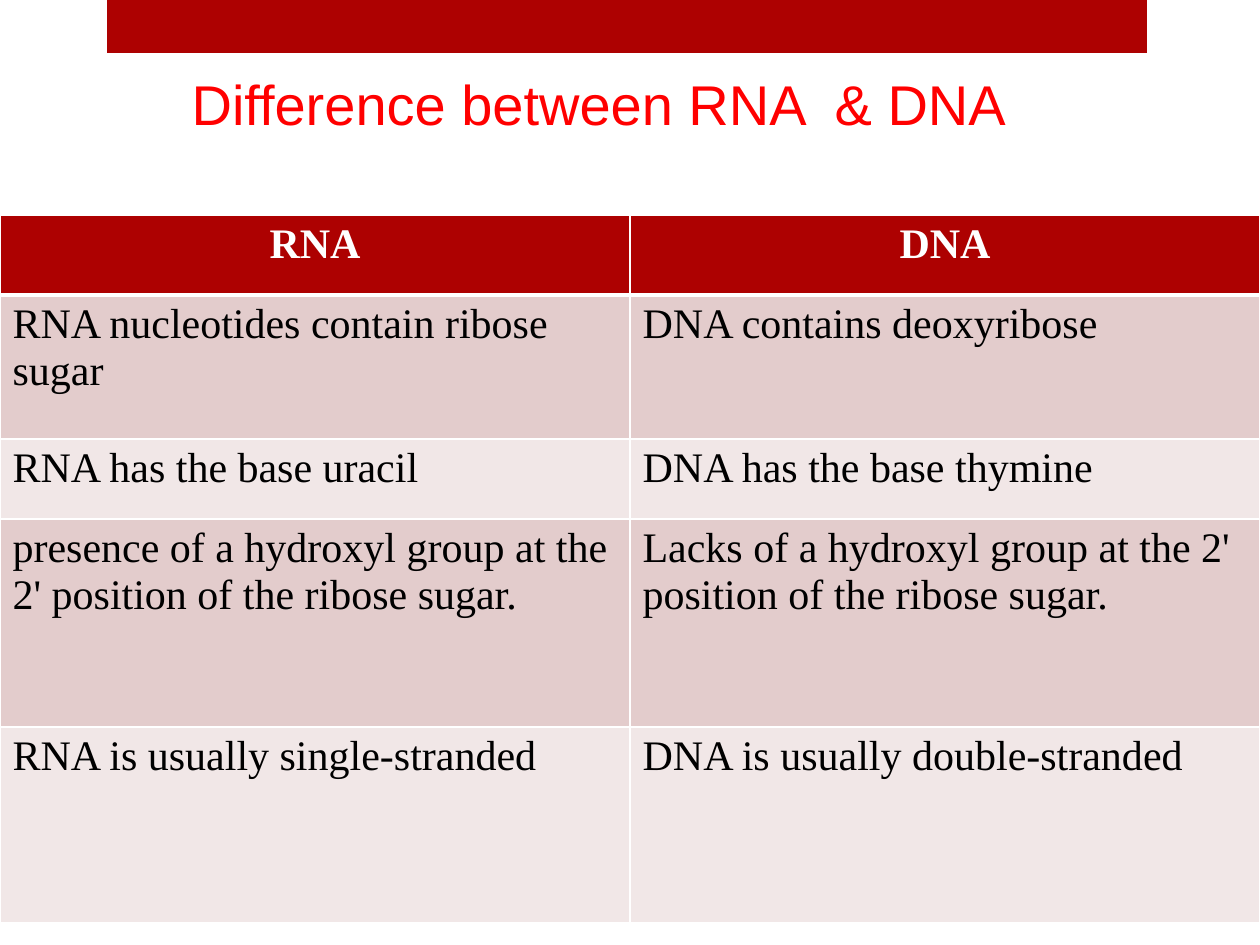
import pptx
import pptx.dml.color
import pptx.enum.shapes
import pptx.enum.text
import pptx.oxml
import pptx.oxml.ns
import pptx.util

TITLE = "Difference between RNA  & DNA"
ROWS = [  # height in px, RNA, DNA
    (80, "RNA", "DNA"),
    (144, "RNA nucleotides contain ribose sugar", "DNA contains deoxyribose"),
    (80, "RNA has the base uracil", "DNA has the base thymine"),
    (208, "presence of a hydroxyl group at the 2' position of the ribose sugar.",
     "Lacks of a hydroxyl group at the 2' position of the ribose sugar."),
    (196, "RNA is usually single-stranded", "DNA is usually double-stranded"),
]
SLIDE_WIDTH, SLIDE_HEIGHT = 1260, 945
BAR = (107, 0, 1040, 53)
TITLE_BOX = (179, 63, 847, 81)
TABLE_TOP = 215

DARK_RED = pptx.dml.color.RGBColor(0xAD, 0x01, 0x01)
RED = pptx.dml.color.RGBColor(0xFF, 0x00, 0x00)
BANDS = [pptx.dml.color.RGBColor(0xF1, 0xE7, 0xE7),
         pptx.dml.color.RGBColor(0xE3, 0xCC, 0xCC)]
WHITE = pptx.dml.color.RGBColor(0xFF, 0xFF, 0xFF)
BLACK = pptx.dml.color.RGBColor(0x00, 0x00, 0x00)


def px(*lengths):
    return [round(length * 914400 / 126) for length in lengths]


def set_borders(cell, top, bottom):
    """Draw white borders; top and bottom are widths in points."""
    properties = cell._tc.get_or_add_tcPr()
    for side, width in (("L", 1), ("R", 1), ("T", top), ("B", bottom)):
        properties.append(pptx.oxml.parse_xml(
            f'<a:ln{side} {pptx.oxml.ns.nsdecls("a")} w="{pptx.util.Pt(width)}">'
            f'<a:solidFill><a:srgbClr val="{WHITE}"/></a:solidFill></a:ln{side}>'))


def add_bar(slide):
    bar = slide.shapes.add_shape(
        pptx.enum.shapes.MSO_SHAPE.RECTANGLE, *px(*BAR))
    bar.shadow.inherit = False
    bar.fill.solid()
    bar.fill.fore_color.rgb = DARK_RED
    bar.line.fill.background()


def fill_title(slide):
    title = slide.shapes.title
    title.left, title.top, title.width, title.height = px(*TITLE_BOX)
    frame = title.text_frame
    frame.text = TITLE
    frame.word_wrap = False
    frame.auto_size = pptx.enum.text.MSO_AUTO_SIZE.SHAPE_TO_FIT_TEXT
    frame.vertical_anchor = pptx.enum.text.MSO_ANCHOR.TOP
    paragraph = frame.paragraphs[0]
    paragraph.alignment = pptx.enum.text.PP_ALIGN.LEFT
    paragraph.font.name = "Arial"
    paragraph.font.size = pptx.util.Pt(32)
    paragraph.font.color.rgb = RED


def add_comparison(slide):
    height = sum(row[0] for row in ROWS)
    table = slide.shapes.add_table(
        len(ROWS), 2, *px(0, TABLE_TOP, SLIDE_WIDTH, height)).table
    table.horz_banding = False
    for row_index, (row_height, *texts) in enumerate(ROWS):
        header = row_index == 0
        table.rows[row_index].height = px(row_height)[0]
        for column_index, text in enumerate(texts):
            cell = table.cell(row_index, column_index)
            set_borders(cell, 3 if row_index == 1 else 1, 3 if header else 1)
            cell.fill.solid()
            cell.fill.fore_color.rgb = DARK_RED if header else BANDS[row_index % 2]
            cell.text = text
            paragraph = cell.text_frame.paragraphs[0]
            if header:
                paragraph.alignment = pptx.enum.text.PP_ALIGN.CENTER
            paragraph.font.name = "Times New Roman"
            paragraph.font.size = pptx.util.Pt(24)
            paragraph.font.bold = header
            paragraph.font.color.rgb = WHITE if header else BLACK


def main():
    presentation = pptx.Presentation()
    presentation.slide_width, presentation.slide_height = px(SLIDE_WIDTH, SLIDE_HEIGHT)
    slide = presentation.slides.add_slide(presentation.slide_layouts[5])
    add_bar(slide)
    fill_title(slide)
    add_comparison(slide)
    presentation.save("out.pptx")


if __name__ == "__main__":
    main()
